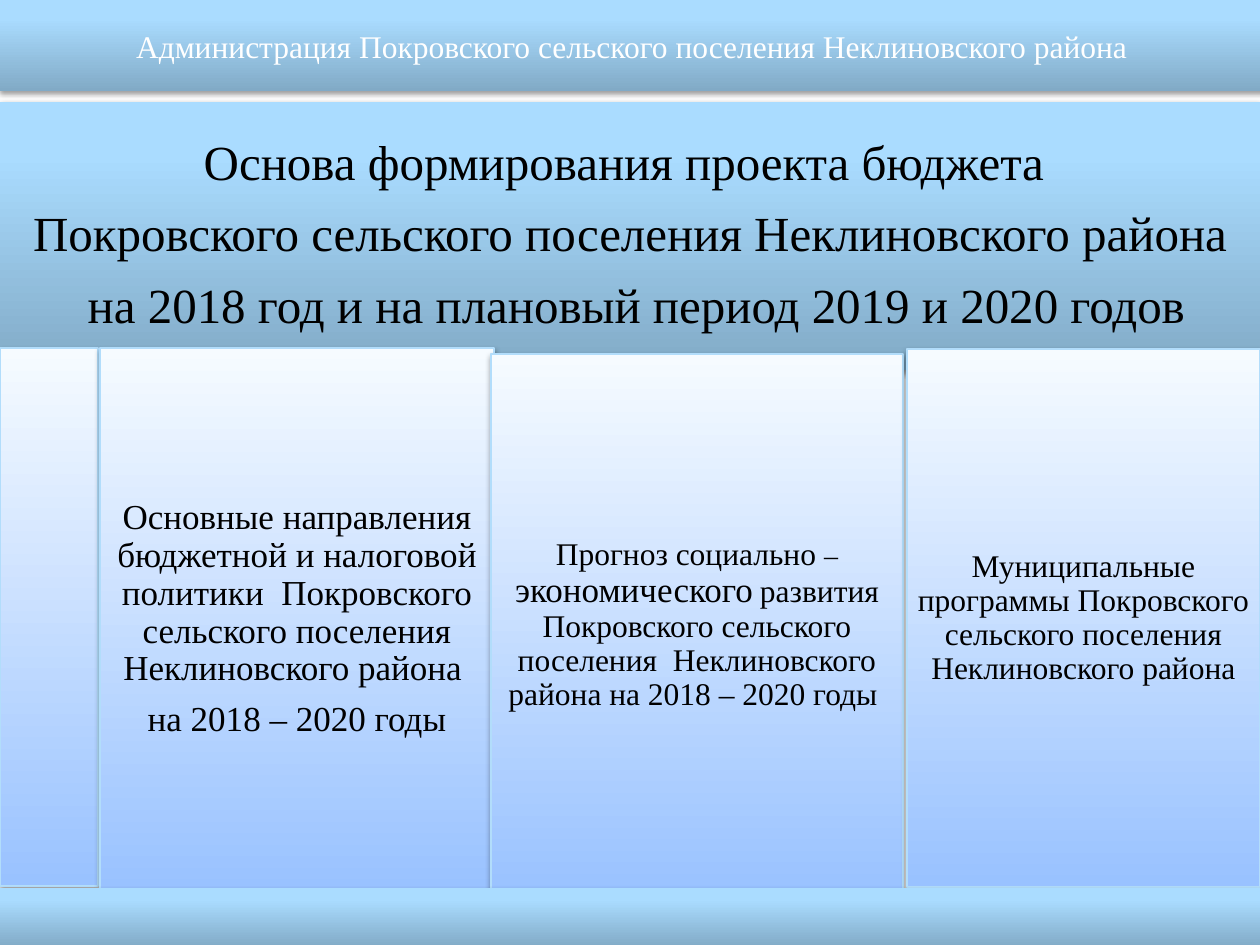
"""Build the slide on the basis of the settlement's draft budget."""
from pptx import Presentation
from pptx.dml.color import RGBColor
from pptx.enum.shapes import MSO_SHAPE as Form
from pptx.enum.text import MSO_ANCHOR as Anchor, MSO_AUTO_SIZE as Fit, PP_ALIGN as Align
from pptx.oxml import parse_xml
from pptx.util import Pt

PX = 914400 / 126
FONT = "Times New Roman"
BAND = [("81AAC6", 0), ("AADCFF", 0.8)]
PANEL = [("99C2FF", 0), ("F6FBFF", 1)]
SHADE = """<a:effectLst xmlns:a="http://schemas.openxmlformats.org/drawingml/2006/main">
<a:outerShdw blurRad="39400" dist="22000" dir="5400000" rotWithShape="0">
<a:srgbClr val="000000"><a:alpha val="36000"/></a:srgbClr></a:outerShdw></a:effectLst>"""


def paint(shape, box, stops, edge=None):
    shape.left, shape.top, shape.width, shape.height = [round(n * PX) for n in box]
    shape.fill.gradient()
    shape.fill.gradient_angle = 90
    for stop, (tint, pos) in zip(shape.fill.gradient_stops, stops):
        stop.color.rgb = RGBColor.from_string(tint)
        stop.position = pos
    if edge:
        shape.line.color.rgb = RGBColor.from_string(edge)
        shape.line.width = Pt(0.75)
    else:
        shape.line.fill.background()
    shape._element.spPr.append(parse_xml(SHADE))


def write(shape, paras, size, tint="000000", inset=9, lead=0.9, gap=0.38):
    frame = shape.text_frame
    frame.word_wrap = True
    frame.auto_size = Fit.NONE
    frame.vertical_anchor = Anchor.MIDDLE
    frame.margin_left = frame.margin_right = round(inset * PX)
    frame.margin_top = frame.margin_bottom = round(inset * PX)
    for i, runs in enumerate(paras):
        para = frame.add_paragraph() if i else frame.paragraphs[0]
        para.alignment = Align.CENTER
        para.line_spacing = lead
        para.space_before = Pt(0)
        para.space_after = Pt(size * gap)
        para.font.name = FONT
        para.font.size = Pt(size)
        para.font.color.rgb = RGBColor.from_string(tint)
        for text, own in runs:
            run = para.add_run()
            run.text = text
            if own != size:
                run.font.size = Pt(own)


deck = Presentation()
deck.slide_width, deck.slide_height = round(1260 * PX), round(945 * PX)
slide = deck.slides.add_slide(deck.slide_layouts[5])
shapes = slide.shapes

title = shapes.title
paint(title, (0, 102, 1260, 268), BAND)
lines = [
    "Основа формирования проекта бюджета ",
    "Покровского сельского поселения Неклиновского района",
    " на 2018 год и на плановый период 2019 и 2020 годов",
]
write(title, [[(line, 28)] for line in lines], 28, inset=15)

panels = [
    ((0, 348, 98, 538), 18, []),
    ((100, 348, 394, 543), 20, [
        [("Основные направления бюджетной и налоговой политики  Покровского "
          "сельского поселения Неклиновского района ", 20)],
        [("на 2018 – 2020 годы", 20)],
    ]),
    ((491, 354, 412, 543), 18, [[
        ("Прогноз социально ", 18), ("– ", 16), ("экономического", 20), (" ", 16),
        ("развития Покровского сельского поселения  Неклиновского "
         "района на 2018 – 2020 годы ", 18),
    ]]),
    ((907, 349, 353, 538), 18, [
        [("Муниципальные программы Покровского сельского поселения "
          "Неклиновского района", 18)],
    ]),
]
for box, size, paras in panels:
    panel = shapes.add_shape(Form.RECTANGLE, 0, 0, 0, 0)
    paint(panel, box, PANEL, "B2DDFB")
    write(panel, paras, size)

foot = shapes.add_shape(Form.RECTANGLE, 0, 0, 0, 0)
paint(foot, (0, 888, 1260, 59), BAND)

head = shapes.add_shape(Form.RECTANGLE, 0, 0, 0, 0)
paint(head, (0, 0, 1264, 91), BAND)
name = "Администрация Покровского сельского поселения Неклиновского района"
write(head, [[(name, 18)]], 18, "FFFFFF", lead=1, gap=0)

deck.save("out.pptx")
